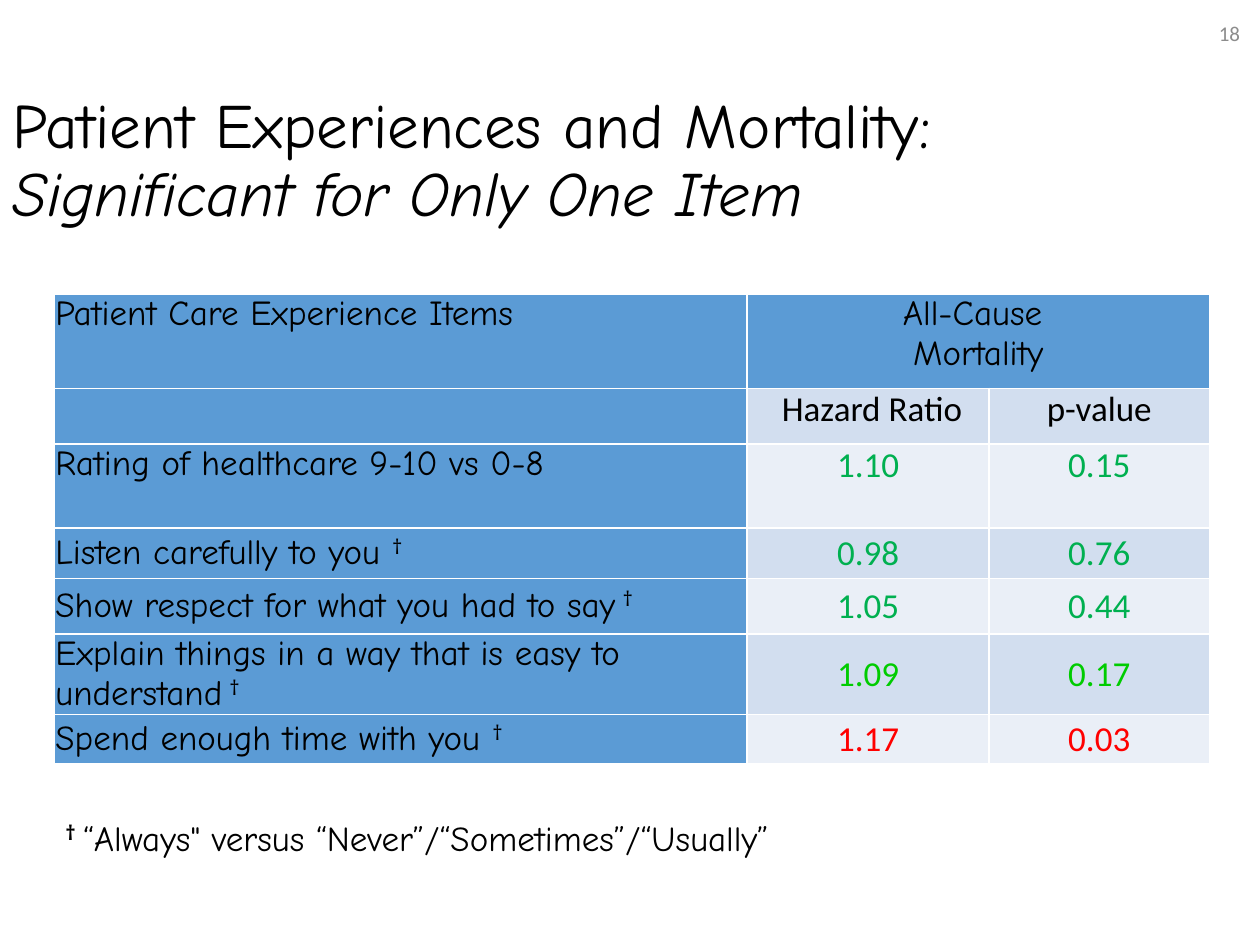
from lxml import etree
from pptx import Presentation
from pptx.dml.color import RGBColor
from pptx.enum.text import MSO_ANCHOR, MSO_AUTO_SIZE, PP_ALIGN
from pptx.oxml.ns import qn
from pptx.util import Inches, Pt

LEFT, CENTER, RIGHT = PP_ALIGN.LEFT, PP_ALIGN.CENTER, PP_ALIGN.RIGHT
TOP, MIDDLE = MSO_ANCHOR.TOP, MSO_ANCHOR.MIDDLE
FIT, FIXED = MSO_AUTO_SIZE.SHAPE_TO_FIT_TEXT, MSO_AUTO_SIZE.NONE

HAND, PLAIN = "Comic Neue", "Calibri"
BLACK, WHITE, GRAY = "000000", "FFFFFF", "8C8C8C"
BLUE, BANDS = "5B9BD5", ("EAEFF7", "D2DEEF")
GREEN, LIME, RED = "00B050", "00CC00", "FF0000"

TITLE = ["Patient Experiences and Mortality: ", "\n",
         ("Significant for Only One Item", {"italic": True})]
UP = {"up": True}
COLS = (55, 19.2, 17.5)
# item, dagger, values, value colour, row height, anchor
ROWS = [
    ("Rating of healthcare 9-10 vs 0-8", "", ("1.10", "0.15"), GREEN, 8.9, TOP),
    ("Listen carefully to you ", "†", ("0.98", "0.76"), GREEN, 5.3, MIDDLE),
    ("Show respect for what you had to say", " †", ("1.05", "0.44"), GREEN, 5.9, MIDDLE),
    ("Explain things in a way that is easy to understand", " †",
     ("1.09", "0.17"), LIME, 8.5, MIDDLE),
    ("Spend enough time with you ", "†", ("1.17", "0.03"), RED, 5.2, MIDDLE),
]


def rgb(code):
    return RGBColor.from_string(code)


def apply(obj, form):
    for name, value in form.items():
        setattr(obj, name, value)


class Deck:
    """Holds the style and the current slide; lengths are percent of the slide."""

    def __init__(self):
        self.prs = Presentation()
        apply(self.prs, {"slide_width": Inches(10), "slide_height": Inches(7.5)})
        self.slide = self.prs.slides.add_slide(self.prs.slide_layouts[5])
        self.cell_form = {"margin_left": Inches(0.01), "margin_right": Inches(0.01),
                          "margin_top": 0, "margin_bottom": 0}

    def wide(self, share):
        return round(self.prs.slide_width * share / 100)

    def high(self, share):
        return round(self.prs.slide_height * share / 100)

    def place(self, x, y, w, h):
        return self.wide(x), self.high(y), self.wide(w), self.high(h)

    def fill_in(self, frame, lines, align=LEFT, size=20, font=HAND, color=BLACK, **form):
        """Fill a frame; each line is a list of texts or (text, format) pairs."""
        for i, line in enumerate(lines):
            para = frame.paragraphs[0] if i == 0 else frame.add_paragraph()
            apply(para, {"alignment": align, **form})
            for part in line:
                text, extra = (part, {}) if isinstance(part, str) else part
                if text == "\n":
                    para.add_line_break()
                    etree.SubElement(para._p[-1], qn("a:rPr"), sz=str(size * 100))
                    continue
                run = para.add_run()
                run.text = text
                look = {"size": Pt(size), "name": font, **extra}
                if look.pop("up", False):
                    run._r.get_or_add_rPr().set("baseline", "30000")
                apply(run.font, look)
                run.font.color.rgb = rgb(color)

    def title(self, box, line):
        shape = self.slide.shapes.title
        apply(shape, dict(zip(("left", "top", "width", "height"), self.place(*box))))
        apply(shape.text_frame, {"vertical_anchor": MIDDLE, "auto_size": FIXED})
        self.fill_in(shape.text_frame, [line], size=36, line_spacing=0.9)

    def text(self, box, line, anchor=TOP, fit=FIXED, **look):
        frame = self.slide.shapes.add_textbox(*self.place(*box)).text_frame
        apply(frame, {"word_wrap": True, "vertical_anchor": anchor, "auto_size": fit})
        self.fill_in(frame, [line], **look)

    def edge(self, cell):
        """Give a cell thin white borders, placed ahead of its fill."""
        props = cell._tc.get_or_add_tcPr()
        for i, side in enumerate("LRTB"):
            line = etree.Element(qn(f"a:ln{side}"), w=str(Pt(1)))
            fill = etree.SubElement(line, qn("a:solidFill"))
            etree.SubElement(fill, qn("a:srgbClr"), val=WHITE)
            props.insert(i, line)

    def cell(self, cell, lines, fill, anchor=TOP, **look):
        apply(cell, {**self.cell_form, "vertical_anchor": anchor})
        cell.fill.solid()
        cell.fill.fore_color.rgb = rgb(fill)
        self.edge(cell)
        self.fill_in(cell.text_frame, lines, **look)

    def table(self, x, y, cols, rows):
        box = self.place(x, y, sum(cols), sum(rows))
        grid = self.slide.shapes.add_table(len(rows), len(cols), *box).table
        for col, share in zip(grid.columns, cols):
            col.width = self.wide(share)
        for row, share in zip(grid.rows, rows):
            row.height = self.high(share)
        return grid


def main():
    deck = Deck()
    deck.title((0, 10, 100, 14.4), TITLE)

    grid = deck.table(4.3, 31.1, COLS, [10, 5.9] + [row[4] for row in ROWS])
    grid.cell(0, 1).merge(grid.cell(0, 2))
    deck.cell(grid.cell(0, 0), [["Patient Care Experience Items"]], BLUE)
    deck.cell(grid.cell(0, 1), [["All-Cause "], ["Mortality"]], BLUE, align=CENTER)
    deck.edge(grid.cell(0, 2))
    deck.cell(grid.cell(1, 0), [], BLUE)
    for c, head in enumerate((" Hazard Ratio", "p-value"), 1):
        deck.cell(grid.cell(1, c), [[head]], BANDS[1], align=CENTER, font=PLAIN)
    for r, (item, mark, values, color, _, anchor) in enumerate(ROWS, 2):
        line = [item, (mark, UP)] if mark else [item]
        deck.cell(grid.cell(r, 0), [line], BLUE, anchor)
        for c, value in enumerate(values, 1):
            deck.cell(grid.cell(r, c), [[value]], BANDS[r % 2], anchor,
                      align=CENTER, font=PLAIN, color=color)

    note = [("† ", {"bold": True, **UP}), "“Always\" versus “Never”/“Sometimes”/“Usually”"]
    deck.text((4.2, 85.7, 90, 5.9), note, fit=FIT)
    deck.text((93.9, 0.9, 5.5, 5.3), ["18"], MIDDLE,
              align=RIGHT, size=12, font=PLAIN, color=GRAY)
    deck.prs.save("out.pptx")


if __name__ == "__main__":
    main()
